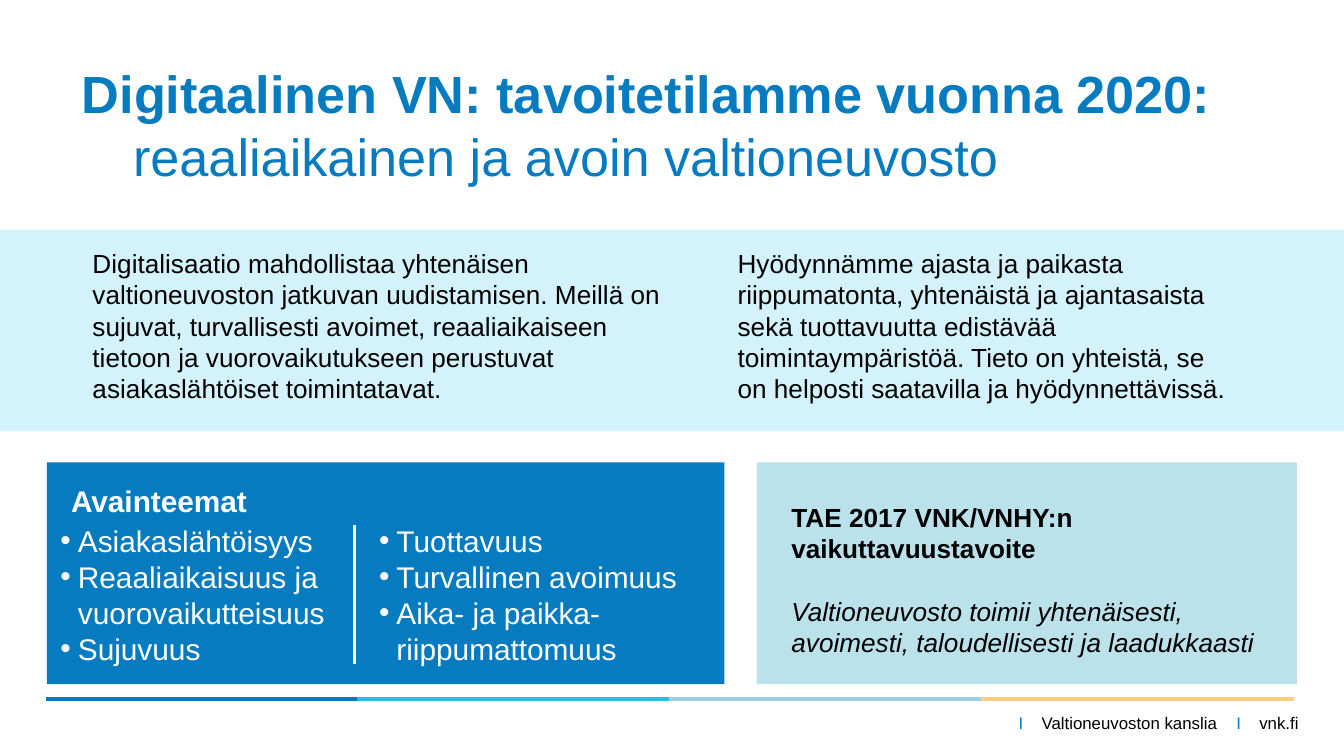
from lxml import etree
from pptx import Presentation
from pptx import util as u
from pptx.dml.color import RGBColor
from pptx.enum import shapes, text
from pptx.oxml import ns

BLUE = RGBColor(0x07, 0x7B, 0xC0)
CYAN = RGBColor(0x21, 0xBD, 0xED)
MIST = RGBColor(0x9A, 0xD0, 0xE1)
SAND = RGBColor(0xFA, 0xCD, 0x7F)
TEAL = RGBColor(0xBB, 0xE1, 0xEB)
PALE = RGBColor(0xD3, 0xF2, 0xFB)
BLACK = RGBColor(0, 0, 0)
WHITE = RGBColor(0xFF, 0xFF, 0xFF)


def write(box, lines, size, color, hang=0, **style):
    """Fill a box with paragraphs in one format."""
    frame = box.text_frame
    frame.word_wrap = True
    frame.auto_size = text.MSO_AUTO_SIZE.NONE
    for i, line in enumerate(lines):
        para = frame.paragraphs[0] if i == 0 else frame.add_paragraph()
        para.text = line
        form = dict(alignment=text.PP_ALIGN.LEFT, space_before=u.Pt(0),
                    line_spacing=u.Pt(size * 1.2))
        for name, value in form.items():
            setattr(para, name, value)
        if hang:
            props = para._p.get_or_add_pPr()
            props.set("marL", str(u.Inches(hang)))
            props.set("indent", str(-u.Inches(hang)))
        for run in para.runs:
            run.font.color.rgb = color
            for name, value in dict(name="Arial", size=u.Pt(size), **style).items():
                setattr(run.font, name, value)
    return frame


def rule(x1, y1, x2, y2, color, width):
    """Draw a straight line without a shadow."""
    line = slide.shapes.add_connector(
        shapes.MSO_CONNECTOR.STRAIGHT, *map(u.Inches, (x1, y1, x2, y2)))
    line.line.color.rgb = color
    line.line.width = u.Pt(width)
    etree.SubElement(line.element.spPr, ns.qn("a:effectLst"))


# Widescreen slide, 16:9
prs = Presentation()
prs.slide_width = u.Inches(10)
prs.slide_height = u.Inches(10) * 9 // 16
slide = prs.slides.add_slide(prs.slide_layouts[3])
title, left, right = slide.placeholders

# Footer, spaced with tab stops
foot = slide.shapes.add_textbox(*map(u.Inches, (7.58, 5.27, 2.12, 0.22)))
frame = write(foot, [""], 9, BLACK)
frame.vertical_anchor = text.MSO_ANCHOR.MIDDLE
for side in ("left", "top", "right", "bottom"):
    setattr(frame, "margin_" + side, 0)
para = frame.paragraphs[0]
tabs = etree.SubElement(para._p.get_or_add_pPr(), ns.qn("a:tabLst"))
for stop in (0.17, 1.62, 1.79):
    etree.SubElement(tabs, ns.qn("a:tab"), pos=str(u.Inches(stop)), algn="l")
for words, color in (("I", BLUE), ("\tValtioneuvoston kanslia", BLACK),
                     ("\tI", BLUE), ("\tvnk.fi", BLACK)):
    run = para.add_run()
    run.text = words
    run.font.name, run.font.size = "Arial", u.Pt(9)
    run.font.color.rgb = color

# Four-colour footer rule
step = 2.32
for i, color in enumerate((BLUE, CYAN, MIST, SAND)):
    start = 0.34 + i * step
    rule(start, 5.2, start + 2.33, 5.2, color, 2)

# Panels
for spot, color in (((0.35, 3.44, 5.04, 1.65), BLUE),
                    ((5.63, 3.44, 4.02, 1.65), TEAL),
                    ((0, 1.71, 10, 1.5), PALE)):
    panel = slide.shapes.add_shape(
        shapes.MSO_SHAPE.RECTANGLE, *map(u.Inches, spot))
    panel.shadow.inherit = False
    panel.fill.solid()
    panel.fill.fore_color.rgb = color
    panel.line.fill.background()

# Placeholders, placed above the panels
for box, spot in ((title, (0.51, 0.37, 9.49, 1.07)),
                  (left, (0.35, 3.84, 2.28, 1.18)),
                  (right, (2.72, 3.84, 2.52, 1.18))):
    for name, value in zip(("left", "top", "width", "height"), spot):
        setattr(box, name, u.Inches(value))
    box.element.getparent().append(box.element)

# Title
frame = write(title, ["Digitaalinen VN: tavoitetilamme vuonna 2020:\v"
                      "reaaliaikainen ja avoin valtioneuvosto"],
              28, BLUE, hang=0.38, bold=True)
frame.vertical_anchor = text.MSO_ANCHOR.BOTTOM
frame.paragraphs[0].runs[1].font.bold = False

# Key themes
write(left, ["Asiakaslähtöisyys", "Reaaliaikaisuus ja\vvuorovaikutteisuus",
             "Sujuvuus"], 16, WHITE, hang=0.13)
write(right, ["Tuottavuus", "Turvallinen avoimuus",
              "Aika- ja paikka-\vriippumattomuus"], 16, WHITE, hang=0.13)
rule(2.64, 3.91, 2.64, 4.94, WHITE, 1.5)

# Text boxes
for spot, lines, size, color, bold in (
    ((0.59, 1.79, 4.57, 1.28),
     ["Digitalisaatio mahdollistaa yhtenäisen valtioneuvoston jatkuvan "
      "uudistamisen. Meillä on sujuvat, turvallisesti avoimet, reaaliaikaiseen "
      "tietoon ja vuorovaikutukseen perustuvat asiakaslähtöiset toimintatavat."],
     14, BLACK, False),
    ((5.39, 1.79, 3.9, 1.28),
     ["Hyödynnämme ajasta ja paikasta riippumatonta, yhtenäistä ja ajantasaista "
      "sekä tuottavuutta edistävää toimintaympäristöä. Tieto on yhteistä, se on "
      "helposti saatavilla ja hyödynnettävissä."], 14, BLACK, False),
    ((0.43, 3.54, 2.28, 0.37), ["Avainteemat"], 16, WHITE, True),
    ((5.79, 3.68, 3.86, 1.28),
     ["TAE 2017 VNK/VNHY:n vaikuttavuustavoite",
      "Valtioneuvosto toimii yhtenäisesti, avoimesti, taloudellisesti ja "
      "laadukkaasti"], 14, BLACK, True),
):
    box = slide.shapes.add_textbox(*map(u.Inches, spot))
    frame = write(box, lines, size, color, bold=bold)

# Goal statement under its heading
goal = frame.paragraphs[1]
goal.space_before = u.Pt(16.8)
goal.runs[0].font.bold = False
goal.runs[0].font.italic = True

prs.save("out.pptx")
